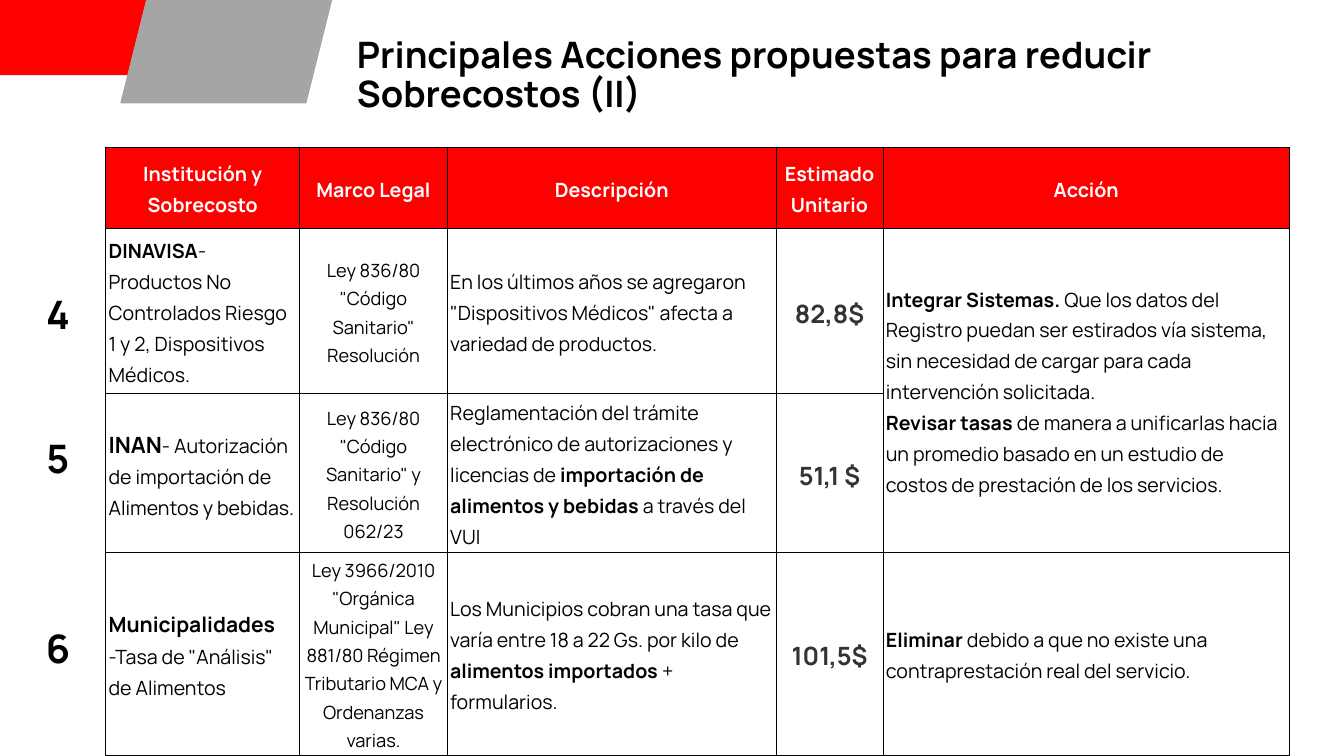
"""Build the slide on proposed actions to reduce extra costs."""
from pptx import Presentation
from pptx.dml.color import RGBColor
from pptx.enum.shapes import MSO_SHAPE
from pptx.enum.text import MSO_ANCHOR, MSO_AUTO_SIZE, PP_ALIGN
from pptx.oxml import parse_xml
from pptx.oxml.ns import nsdecls
from pptx.util import Pt

FONT = "Manrope"
RED, GRAY, BLACK, WHITE, DARK = "FF0000", "A5A5A5", "000000", "FFFFFF", "333333"
BOLD = {"bold": True}

TITLE = "Principales Acciones propuestas para reducir Sobrecostos (II)"
BANDS = [(-21.6, 164.2, 53.3, RED), (86.4, 150.5, 73.4, GRAY)]
MARKS = [("4", 197.3), ("5", 300.2), ("6", 436.3)]

HEADS = ["Institución y Sobrecosto", "Marco Legal", "Descripción",
         "Estimado Unitario", "Acción"]
ROWS = [
    [
        [[("DINAVISA", BOLD),
          "- Productos No Controlados Riesgo 1 y 2, Dispositivos Médicos."]],
        [['Ley 836/80 "Código Sanitario" Resolución']],
        [['En los últimos años se agregaron "Dispositivos Médicos" afecta a '
          "variedad de productos."]],
        [["82,8$"]],
        [[("Integrar Sistemas. ", BOLD),
          "Que los datos del Registro puedan ser estirados vía sistema, sin "
          "necesidad de cargar para cada intervención solicitada."],
         [("Revisar tasas ", BOLD),
          "de manera a unificarlas hacia un promedio basado en un estudio de "
          "costos de prestación de los servicios."]],
    ],
    [
        [[("INAN", {"bold": True, "size": 16}),
          "- Autorización de importación de Alimentos y bebidas."]],
        [['Ley 836/80 "Código Sanitario" y Resolución 062/23']],
        [["Reglamentación del trámite electrónico de autorizaciones y "
          "licencias de ", ("importación de alimentos y bebidas", BOLD),
          " a través del VUI"]],
        [["51,1 $"]],
        [],
    ],
    [
        [[("Municipalidades ", {"bold": True, "size": 15}),
          '-Tasa de "Análisis" de Alimentos']],
        [['Ley 3966/2010 "Orgánica Municipal" Ley 881/80 Régimen Tributario '
          "MCA y Ordenanzas varias."]],
        [["Los Municipios cobran una tasa que varía entre 18 a 22 Gs. por "
          "kilo de ", ("alimentos importados ", BOLD), "+ formularios."]],
        [["101,5$"]],
        [[("Eliminar ", BOLD),
          "debido a que no existe una contraprestación real del servicio."]],
    ],
]
WIDTHS = [138.4, 105.6, 234.8, 76.4, 290.2]
HEIGHTS = [57.8, 118.4, 113, 145]
HEAD = {"color": WHITE, "bold": True, "align": PP_ALIGN.CENTER}
STYLES = [{}, {"size": 13, "align": PP_ALIGN.CENTER}, {},
          {"size": 18, "color": DARK, "bold": True, "align": PP_ALIGN.CENTER}, {}]


def rgb(code):
    """Turn a hex string into a colour."""
    return RGBColor.from_string(code)


def write(frame, paras, size=14, color=BLACK, bold=False,
          align=PP_ALIGN.LEFT, space=1.15):
    """Fill a text frame with paragraphs of plain or formatted runs."""
    for at, runs in enumerate(paras):
        para = frame.paragraphs[0] if at == 0 else frame.add_paragraph()
        para.alignment, para.line_spacing = align, space
        for part in runs:
            text, extra = (part, {}) if isinstance(part, str) else part
            run = para.add_run()
            run.text = text
            run.font.name = FONT
            run.font.size = Pt(extra.get("size", size))
            run.font.bold = extra.get("bold", bold)
            run.font.color.rgb = rgb(color)


def inset(box, side, top):
    """Set the margins of a text frame or cell."""
    box.margin_left = box.margin_right = Pt(side)
    box.margin_top = box.margin_bottom = Pt(top)


def frame_cell(cell):
    """Draw a thin black border around a cell."""
    props = cell._tc.get_or_add_tcPr()
    for at, side in enumerate("LRTB"):
        props.insert(at, parse_xml(
            f'<a:ln{side} {nsdecls("a")} w="9525"><a:solidFill>'
            f'<a:srgbClr val="{BLACK}"/></a:solidFill></a:ln{side}>'))


def add_bands(slide):
    """Add the slanted bands at the top left."""
    for left, width, height, color in BANDS:
        band = slide.shapes.add_shape(
            MSO_SHAPE.PARALLELOGRAM, Pt(left), 0, Pt(width), Pt(height))
        band.shadow.inherit = False
        band.fill.solid()
        band.fill.fore_color.rgb = band.line.color.rgb = rgb(color)
        band.line.width = Pt(0.75)


def add_marks(slide):
    """Add the row numbers left of the table."""
    for text, top in MARKS:
        frame = slide.shapes.add_textbox(
            Pt(22.3), Pt(top), Pt(38.2), Pt(53.3)).text_frame
        frame.word_wrap = True
        frame.vertical_anchor = MSO_ANCHOR.MIDDLE
        inset(frame, 7.2, 7.2)
        write(frame, [[text]], size=28, bold=True,
              align=PP_ALIGN.CENTER, space=1)


def add_grid(slide):
    """Add the table of costs and actions."""
    grid = slide.shapes.add_table(
        len(HEIGHTS), len(WIDTHS), Pt(75.6), Pt(105.2),
        Pt(sum(WIDTHS)), Pt(sum(HEIGHTS))).table
    grid.first_row = grid.horz_banding = False
    for col, width in zip(grid.columns, WIDTHS):
        col.width = Pt(width)
    for row, height in zip(grid.rows, HEIGHTS):
        row.height = Pt(height)
    for r, row in enumerate([[[[head]] for head in HEADS]] + ROWS):
        for c, paras in enumerate(row):
            cell = grid.cell(r, c)
            cell.vertical_anchor = MSO_ANCHOR.MIDDLE
            inset(cell, 2, 1.5)
            if r == 0:
                cell.fill.solid()
                cell.fill.fore_color.rgb = rgb(RED)
            else:
                cell.fill.background()
            write(cell.text_frame, paras, **(STYLES[c] if r else HEAD))
            frame_cell(cell)
    grid.cell(1, 4).merge(grid.cell(2, 4))


def add_title(slide):
    """Place and fill the title."""
    title = slide.shapes.title
    title.left, title.top = Pt(247.7), Pt(18)
    title.width, title.height = Pt(656.6), Pt(73.4)
    frame = title.text_frame
    frame.word_wrap = True
    frame.auto_size = MSO_AUTO_SIZE.NONE
    frame.vertical_anchor = MSO_ANCHOR.MIDDLE
    inset(frame, 7.2, 3.6)
    write(frame, [[TITLE]], size=26, bold=True, space=0.9)


def main():
    """Build and save the deck."""
    deck = Presentation()
    deck.slide_width, deck.slide_height = Pt(960), Pt(540)
    slide = deck.slides.add_slide(deck.slide_layouts[5])
    add_bands(slide)
    add_marks(slide)
    add_grid(slide)
    add_title(slide)
    deck.save("out.pptx")


if __name__ == "__main__":
    main()
